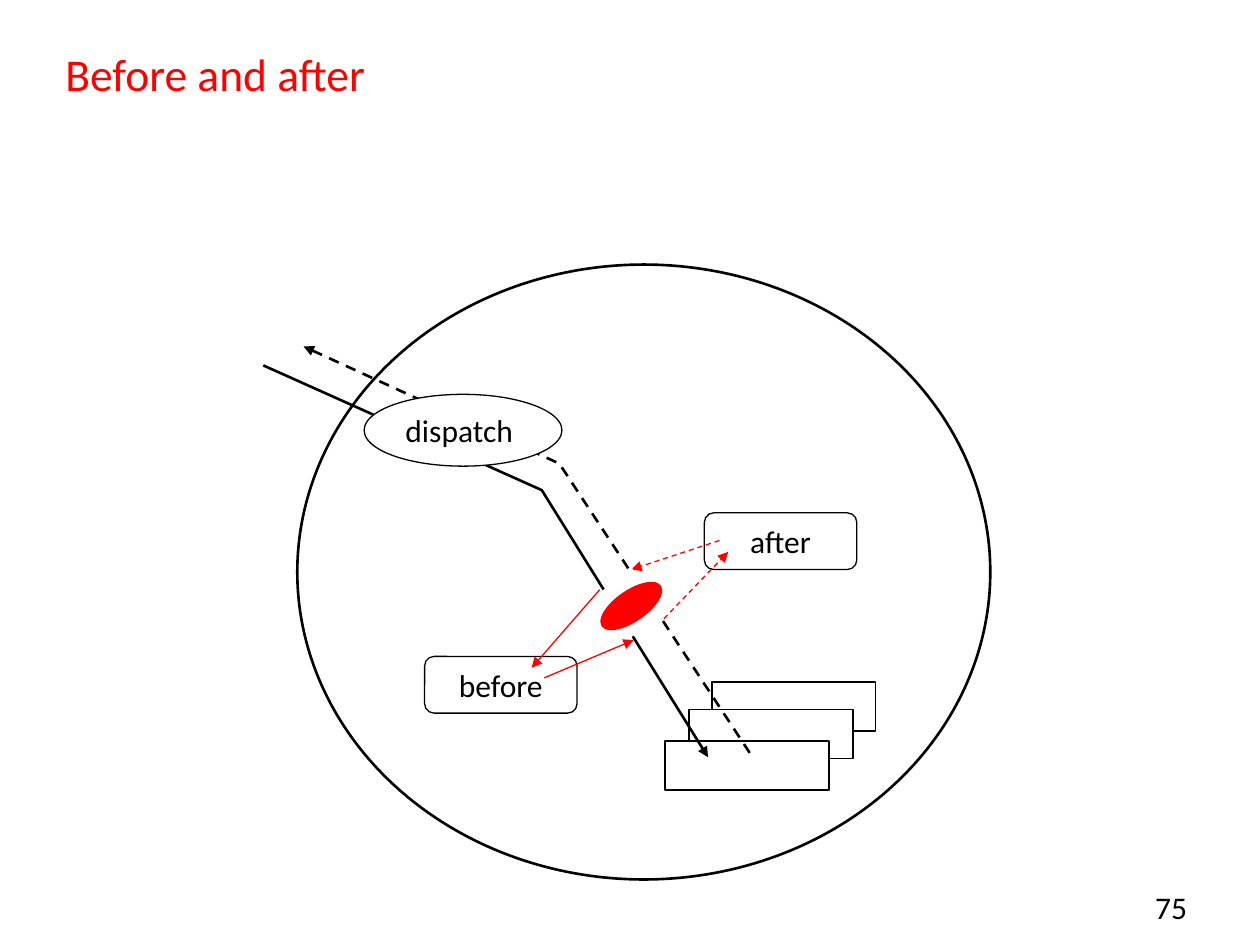
from lxml.etree import SubElement
from pptx import Presentation
from pptx.dml.color import RGBColor
from pptx.enum.dml import MSO_LINE
from pptx.enum.shapes import MSO_CONNECTOR, MSO_SHAPE
from pptx.enum.text import MSO_ANCHOR, PP_ALIGN
from pptx.oxml.ns import qn
from pptx.util import Inches, Pt

BLACK, WHITE, RED = "000000", "FFFFFF", "FF0000"
LEFT, CENTER, RIGHT = PP_ALIGN.LEFT, PP_ALIGN.CENTER, PP_ALIGN.RIGHT
HEAD, TAIL = "a:headEnd", "a:tailEnd"
OVAL, RECT, ROUND = MSO_SHAPE.OVAL, MSO_SHAPE.RECTANGLE, MSO_SHAPE.ROUNDED_RECTANGLE

TITLE = ("Before and after", (0.42, 0.33, 9.08, 0.5))
PAGE = ("75", (8.83, 7, 0.69, 0.5))
METHODS = [(5.65, 5.41), (5.47, 5.63), (5.28, 5.88)]
METHOD_SIZE = (1.3, 0.39)
OBJECT = (2.36, 2.1, 5.5, 4.88)
CALL = [(2.09, 2.9), (4.3, 3.89), (5.62, 6.01)]
REPLY = [(2.41, 2.75), (4.44, 3.68), (5.98, 6.02)]
DISPATCH = ("dispatch", (2.89, 3.13, 1.57, 0.57))
# advice box, then its red arrows, then the gap cut into the path
ADVICE = [
    ("before", (3.37, 5.21), False,
     [((4.76, 4.68), (4.22, 5.3)), ((4.32, 5.38), (5.03, 5.08))],
     ((4.79, 4.68), (5.02, 5.05))),
    ("after", (5.59, 4.07), True,
     [((5.27, 4.91), (5.78, 4.38)), ((5.71, 4.29), (5.01, 4.52))],
     ((5, 4.52), (5.24, 4.91))),
]
ADVICE_SIZE = (1.21, 0.45)
JOIN_POINT = (4.89, 4.53, 0.24, 0.56)


def rgb(color):
    return RGBColor.from_string(color)


def inches(values):
    return [Inches(v) for v in values]


def style_line(s, color, width, dashed=False, arrow=None):
    s.line.color.rgb = rgb(color)
    s.line.width = Pt(width)
    if dashed:
        s.line.dash_style = MSO_LINE.DASH
    if arrow:
        SubElement(s.line._get_or_add_ln(), qn(arrow), type="triangle")


def write(s, text, size, color=BLACK, align=LEFT, anchor=MSO_ANCHOR.MIDDLE):
    tf = s.text_frame
    tf.word_wrap = True
    tf.vertical_anchor = anchor
    tf.text = text
    p = tf.paragraphs[0]
    p.alignment = align
    font = p.runs[0].font
    font.name, font.size, font.color.rgb = "Calibri", Pt(size), rgb(color)


def add_shape(kind, box, fill=None, line=BLACK, width=0.75):
    s = shapes.add_shape(kind, *inches(box))
    s.shadow.inherit = False
    if fill:
        s.fill.solid()
        s.fill.fore_color.rgb = rgb(fill)
    else:
        s.fill.background()
    style_line(s, line, width)
    return s


def add_path(points, arrow, dashed=False):
    start, *rest = [inches(pt) for pt in points]
    builder = shapes.build_freeform(*start)
    builder.add_line_segments(rest, close=False)
    s = builder.convert_to_shape()
    s.shadow.inherit = False
    s.fill.background()
    style_line(s, BLACK, 1.5, dashed, arrow)


def add_line(ends, color, width, dashed=False, arrow=None):
    start, end = ends
    s = shapes.add_connector(MSO_CONNECTOR.STRAIGHT, *inches(start + end))
    style_line(s, color, width, dashed, arrow)
    SubElement(s._element.spPr, qn("a:effectLst"))


prs = Presentation()
prs.slide_width, prs.slide_height = inches((10, 7.5))
shapes = prs.slides.add_slide(prs.slide_layouts[6]).shapes

text, box = PAGE
write(shapes.add_textbox(*inches(box)), text, 18, align=RIGHT, anchor=MSO_ANCHOR.TOP)
text, box = TITLE
write(shapes.add_textbox(*inches(box)), text, 26, RED)

for corner in METHODS:
    add_shape(RECT, corner + METHOD_SIZE, WHITE, width=1)
add_shape(OVAL, OBJECT, width=1.5)
add_path(CALL, TAIL)
add_path(REPLY, HEAD, dashed=True)

text, box = DISPATCH
write(add_shape(OVAL, box, WHITE), text, 18)

for text, corner, dashed, arrows, gap in ADVICE:
    write(add_shape(ROUND, corner + ADVICE_SIZE), text, 18, align=CENTER)
    for ends in arrows:
        add_line(ends, RED, 0.75, dashed, TAIL)
    add_line(gap, WHITE, 3)

add_shape(OVAL, JOIN_POINT, RED, RED).rotation = 55.5

prs.save("out.pptx")
